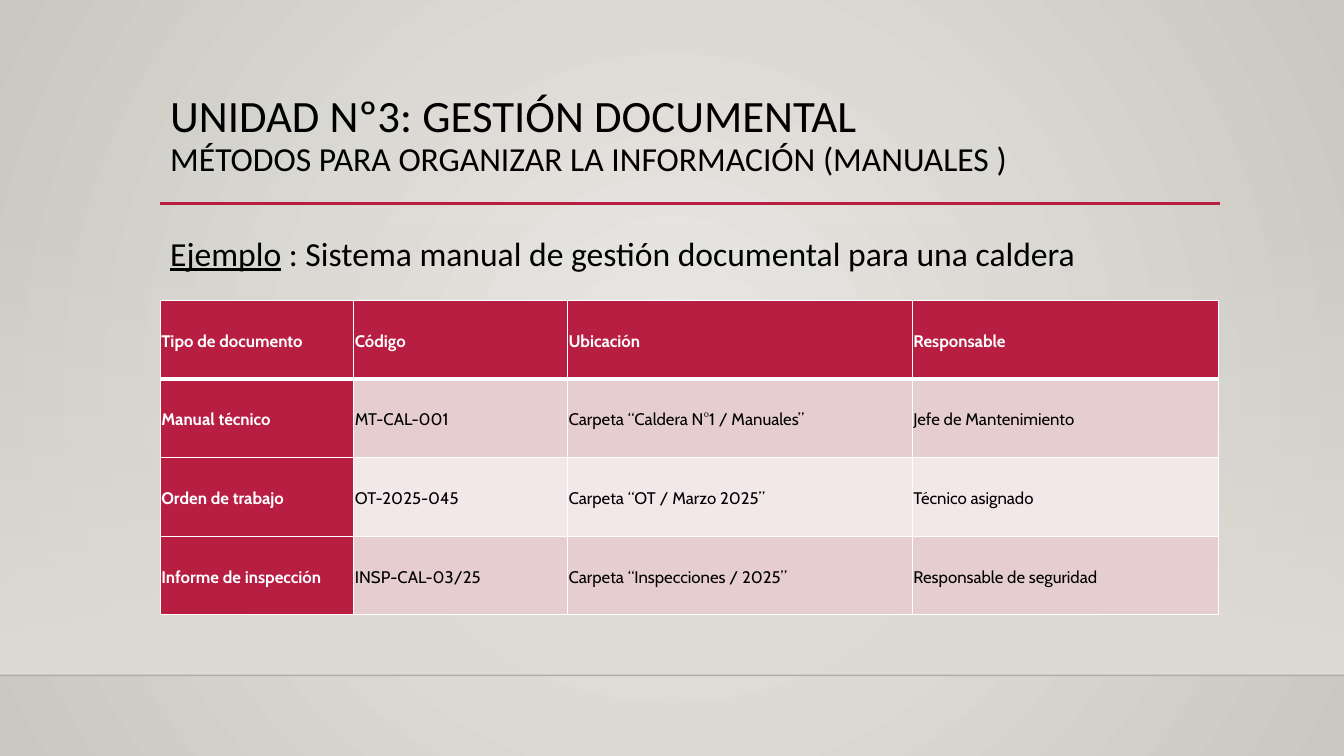
from lxml import etree
from pptx import Presentation
from pptx import util as u
from pptx.dml import color
from pptx.enum import shapes, text
from pptx.oxml import ns, parse_xml

COLORS = {
    "center": "ECEAE7",
    "edge": "CAC7C1",
    "floor": "DFDBD5",
    "accent": "B71E42",
    "band_dark": "E6CDCF",
    "band_light": "F3E8E9",
    "white": "FFFFFF",
    "black": "000000",
    "floor_line": "000001",
}
LEFT, WIDTH = 1.59, 10.5
COLUMN_WIDTHS = [1.92, 2.12, 3.42, 3.04]
ROW_HEIGHT = 0.78
ROWS = [
    ["Tipo de documento", "Código", "Ubicación", "Responsable"],
    ["Manual técnico", "MT-CAL-001", "Carpeta “Caldera N°1 / Manuales”", "Jefe de Mantenimiento"],
    ["Orden de trabajo", "OT-2025-045", "Carpeta “OT / Marzo 2025”", "Técnico asignado"],
    ["Informe de inspección", "INSP-CAL-03/25", "Carpeta “Inspecciones / 2025”", "Responsable de seguridad"],
]
CIRCLE = '<a:path path="circle"><a:fillToRect l="50000" t="50000" r="50000" b="50000"/></a:path>'
DOWNWARD = '<a:lin ang="5400000" scaled="0"/>'


def rgb(name):
    return color.RGBColor.from_string(COLORS[name])


def apply_format(target, values):
    for name, value in values.items():
        setattr(target, name, value)


def set_gradient(fill, parent, start, end, start_alpha, direction):
    fill.gradient()
    gradient = parent.find(ns.qn("a:gradFill"))
    parent.replace(gradient, parse_xml(
        f'<a:gradFill {ns.nsdecls("a")} rotWithShape="1"><a:gsLst>'
        f'<a:gs pos="0"><a:srgbClr val="{COLORS[start]}"><a:alpha val="{start_alpha}"/></a:srgbClr></a:gs>'
        f'<a:gs pos="100000"><a:srgbClr val="{COLORS[end]}"/></a:gs>'
        f'</a:gsLst>{direction}</a:gradFill>'))


def set_background(slide):
    fill = slide.background.fill
    properties = slide.element.find(".//" + ns.qn("p:bgPr"))
    set_gradient(fill, properties, "center", "edge", 100000, CIRCLE)


def add_floor(slide):
    shape = slide.shapes.add_shape(
        shapes.MSO_SHAPE.RECTANGLE, 0, u.Inches(2.21), u.Inches(13.33), u.Inches(4.49))
    shape.shadow.inherit = False
    shape.line.fill.background()
    set_gradient(shape.fill, shape.element.spPr, "floor", "floor", 0, DOWNWARD)


def add_rule(slide, start, end, top, line_color, width, alpha=100):
    connector = slide.shapes.add_connector(
        shapes.MSO_CONNECTOR.STRAIGHT, u.Inches(start), u.Inches(top), u.Inches(end), u.Inches(top))
    connector.line.color.rgb = rgb(line_color)
    connector.line.width = u.Pt(width)
    properties = connector.element.spPr
    if alpha < 100:
        value = properties.find(".//" + ns.qn("a:srgbClr"))
        etree.SubElement(value, ns.qn("a:alpha")).set("val", str(alpha * 1000))
    etree.SubElement(properties, ns.qn("a:effectLst"))


def add_run(paragraph, words, size, **values):
    run = paragraph.add_run()
    run.text = words
    run.font.color.rgb = rgb("black")
    apply_format(run.font, {"name": "Calibri", "size": u.Pt(size), **values})


def add_text_box(slide, top, height, spacing):
    frame = slide.shapes.add_textbox(
        u.Inches(LEFT), u.Inches(top), u.Inches(WIDTH), u.Inches(height)).text_frame
    apply_format(frame, {"word_wrap": True, "vertical_anchor": text.MSO_ANCHOR.TOP})
    paragraph = frame.paragraphs[0]
    paragraph.line_spacing = spacing
    return paragraph


def add_borders(cell, bottom_width):
    properties = cell._tc.get_or_add_tcPr()
    for side, width in {"L": 1, "R": 1, "T": 1, "B": bottom_width}.items():
        properties.append(parse_xml(
            f'<a:ln{side} {ns.nsdecls("a")} w="{u.Pt(width)}"><a:solidFill>'
            f'<a:srgbClr val="{COLORS["white"]}"/></a:solidFill></a:ln{side}>'))


def fill_cell(cell, words, row, column):
    heading = row == 0 or column == 0
    band = "band_dark" if row % 2 else "band_light"
    add_borders(cell, 3 if row == 0 else 1)
    cell.fill.solid()
    cell.fill.fore_color.rgb = rgb("accent" if heading else band)
    sides = ("margin_left", "margin_right", "margin_top", "margin_bottom")
    apply_format(cell, dict.fromkeys(sides, u.Inches(0.01)))
    cell.vertical_anchor = text.MSO_ANCHOR.MIDDLE
    cell.text = words
    paragraph = cell.text_frame.paragraphs[0]
    apply_format(paragraph, {"line_spacing": 1.15, "space_after": u.Pt(8)})
    font = paragraph.runs[0].font
    apply_format(font, {"name": "Cabin", "size": u.Pt(12), "bold": heading})
    font.color.rgb = rgb("white" if heading else "black")


def add_document_table(slide):
    table = slide.shapes.add_table(
        len(ROWS), len(COLUMN_WIDTHS), u.Inches(LEFT), u.Inches(2.98),
        u.Inches(WIDTH), u.Inches(ROW_HEIGHT * len(ROWS))).table
    for column, width in zip(table.columns, COLUMN_WIDTHS):
        column.width = u.Inches(width)
    for row, values in enumerate(ROWS):
        table.rows[row].height = u.Inches(ROW_HEIGHT)
        for column, words in enumerate(values):
            fill_cell(table.cell(row, column), words, row, column)


def main():
    presentation = Presentation()
    presentation.slide_width = u.Inches(13.33)
    presentation.slide_height = u.Inches(7.5)
    slide = presentation.slides.add_slide(presentation.slide_layouts[6])
    set_background(slide)
    add_floor(slide)
    add_rule(slide, 0, 13.33, 6.7, "floor_line", 1, alpha=20)
    add_rule(slide, LEFT, 12.1, 2.02, "accent", 2.5)

    title = add_text_box(slide, 0.88, 1.15, 0.9)
    add_run(title, "UNIDAD Nº3: GESTIÓN DOCUMENTAL", 32)
    title.add_line_break()
    add_run(title, "MÉTODOS PARA ORGANIZAR LA INFORMACIÓN (MANUALES )", 24)

    example = add_text_box(slide, 2.2, 4.93, 1.15)
    add_run(example, "Ejemplo", 24, underline=True)
    add_run(example, " : Sistema manual de gestión documental para una caldera", 24)

    add_document_table(slide)
    presentation.save("out.pptx")


if __name__ == "__main__":
    main()
